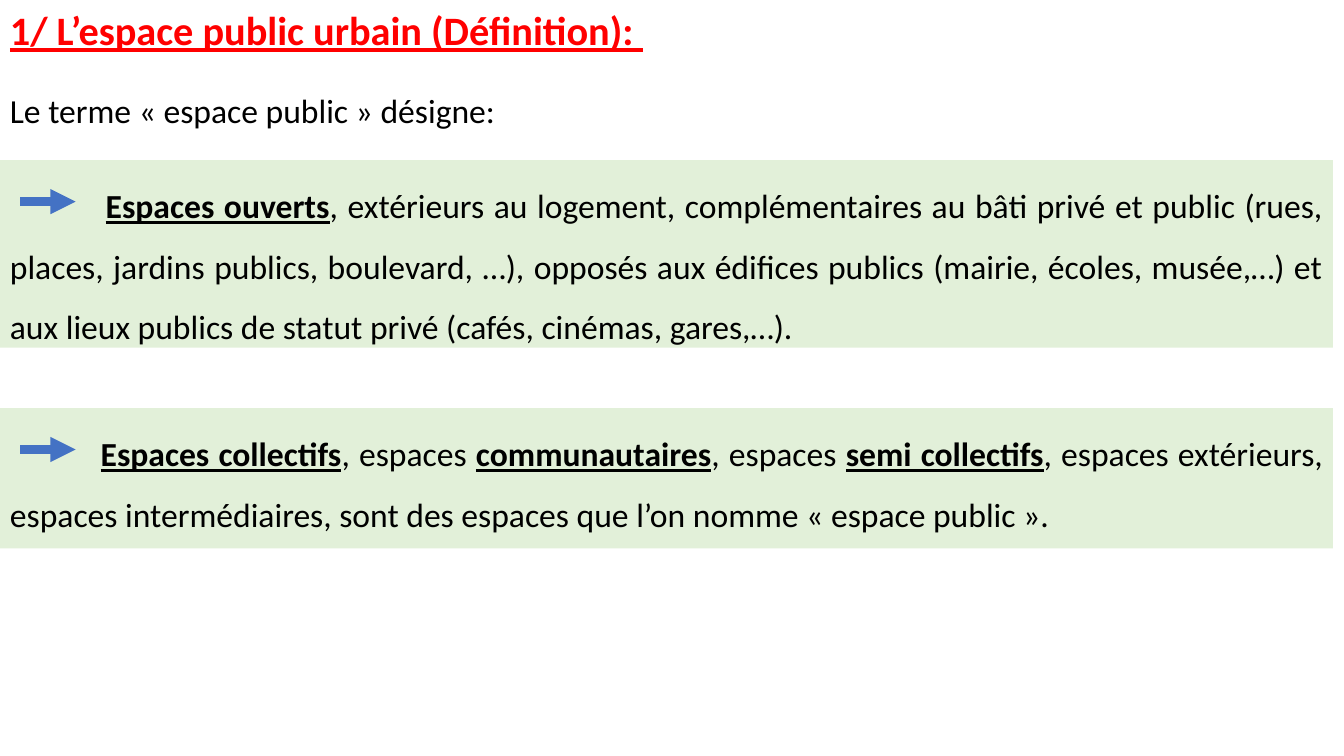
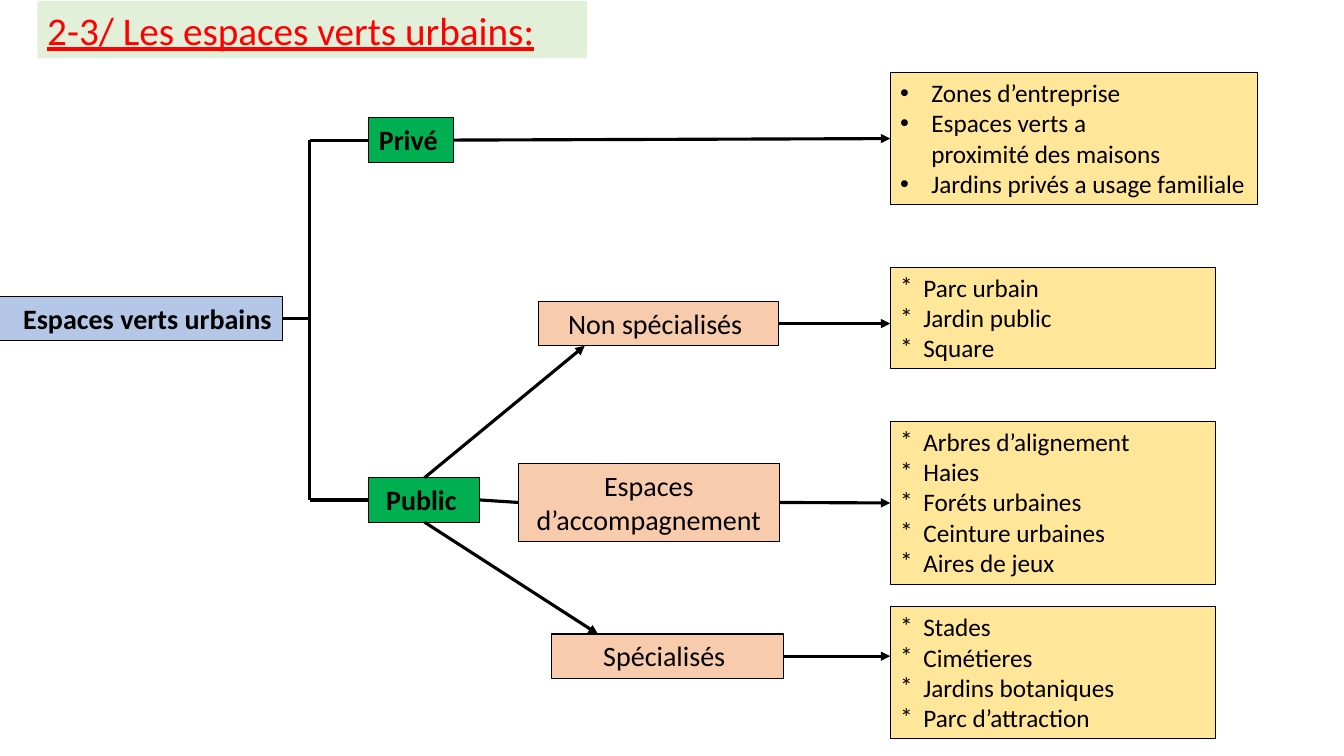
from dataclasses import dataclass

from lxml.etree import SubElement
from pptx import Presentation
from pptx.dml.color import RGBColor
from pptx.enum.shapes import MSO_CONNECTOR as Connector
from pptx.enum.text import MSO_ANCHOR as Anchor, PP_ALIGN as Align
from pptx.oxml.ns import qn
from pptx.util import Pt

PX = 9144  # one px is a hundredth of an inch
TOP, LEFT, BOTTOM, RIGHT = range(4)


@dataclass(frozen=True)
class Theme:
    font: str = "Calibri"
    black: str = "000000"
    title: str = "FF0000"
    band: str = "E2F0D9"
    marker: str = "4472C4"
    root: str = "B4C7E7"
    branch: str = "00B050"
    kind: str = "F8CBAD"
    examples: str = "FFE699"
    title_size: float = 28
    body_size: float = 24
    node_size: float = 20
    list_size: float = 18
    border: float = 0.75
    link: float = 2.25
    marker_line: float = 6


THEME = Theme()

# Content: areas are (left, top, width, height)
DEFINITION_TITLE = "1/ L’espace public urbain (Définition): "
INTRO = "Le terme « espace public » désigne:"
# area, first-line indent, spans (text, emphasised)
DEFINITIONS = [
    ((0, 159, 1322, 186), 95, [
        ("Espaces ouverts", True),
        (", extérieurs au logement, complémentaires au bâti privé et public "
         "(rues, places, jardins publics, boulevard, …), opposés aux édifices "
         "publics (mairie, écoles, musée,…) et aux lieux publics de statut "
         "privé (cafés, cinémas, gares,…).", False)]),
    ((0, 405, 1322, 139), 90, [
        ("Espaces collectifs", True), (", espaces ", False),
        ("communautaires", True), (", espaces ", False),
        ("semi collectifs", True),
        (", espaces extérieurs, espaces intermédiaires, sont des espaces "
         "que l’on nomme « espace public ».", False)]),
]

GREEN_TITLE = "2-3/ Les espaces verts urbains:"
# name: (text, area, fill, left inset)
STEMS = {
    "root": ("Espaces verts urbains", (0, 294, 280, 44), THEME.root, 23),
    "private": ("Privé", (366, 117, 84, 44), THEME.branch, 10),
    "public": ("Public", (366, 474, 110, 44), THEME.branch, 17),
}
KINDS = {
    "general": ("Non spécialisés ", (534, 299, 238, 44)),
    "support": ("Espaces d’accompagnement", (514, 460, 259, 77)),
    "special": ("Spécialisés ", (547, 629, 230, 44)),
}
LIST_LEFT = 883
# name: (top, width, height, bullet, hanging indent, items)
EXAMPLES = {
    "private": (72, 364, 131, "•", 31, [
        "Zones d’entreprise", "Espaces verts a\vproximité des maisons",
        "Jardins privés a usage familiale"]),
    "general": (265, 323, 101, "*", 23, [
        "Parc urbain", "Jardin public", "Square"]),
    "support": (418, 323, 162, "*", 23, [
        "Arbres d’alignement", "Haies", "Foréts urbaines",
        "Ceinture urbaines", "Aires de jeux"]),
    "special": (602, 323, 131, "*", 23, [
        "Stades", "Cimétieres", "Jardins botaniques", "Parc d’attraction"]),
}
TRUNK_X = 307


def rgb(color):
    return RGBColor.from_string(color)


def add_bullet(para, sign, hang):
    props = para._p.get_or_add_pPr()
    props.set("marL", str(hang * PX))
    props.set("indent", str(-hang * PX))
    SubElement(props, qn("a:buFont")).set("typeface", "Arial" if sign == "•" else THEME.font)
    SubElement(props, qn("a:buChar")).set("char", sign)


def add_text(page, area, paras, *, size, color=THEME.black, bold=False,
             underline=False, fill=None, border=False, align=Align.LEFT,
             anchor=Anchor.TOP, spacing=None, indent=0, inset=10, bullet=None):
    """Each paragraph is a string or a list of (text, emphasised) spans."""
    box = page.shapes.add_textbox(*(n * PX for n in area))
    if fill:
        box.fill.solid()
        box.fill.fore_color.rgb = rgb(fill)
    if border:
        box.line.color.rgb = rgb(THEME.black)
        box.line.width = Pt(THEME.border)
    frame = box.text_frame
    frame.word_wrap = True
    frame.vertical_anchor = anchor
    frame.margin_left = inset * PX
    for number, spans in enumerate(paras):
        para = frame.paragraphs[0] if number == 0 else frame.add_paragraph()
        para.alignment = align
        if spacing:
            para.line_spacing = spacing
        if indent:
            para._p.get_or_add_pPr().set("indent", str(indent * PX))
        if bullet:
            add_bullet(para, *bullet)
        if isinstance(spans, str):
            spans = [(spans, False)]
        for text, strong in spans:
            for line_number, line in enumerate(text.split("\v")):
                if line_number:
                    para.add_line_break()
                span = para.add_run()
                span.text = line
                span.font.name = THEME.font
                span.font.size = Pt(size)
                span.font.color.rgb = rgb(color)
                span.font.bold = bold or strong
                span.font.underline = underline or strong
    return box


def add_title(page, area, text, **style):
    style = {"size": THEME.title_size, **style}
    return add_text(page, area, [text], color=THEME.title, underline=True, **style)


def add_line(page, start, end, *, color=THEME.black, width=THEME.link, arrow=False):
    """Each end is a point (x, y) or a joint (box, side)."""
    ends = [(point, None) if isinstance(point[0], int) else ((0, 0), point)
            for point in (start, end)]
    (first, first_joint), (last, last_joint) = ends
    line = page.shapes.add_connector(
        Connector.STRAIGHT, *(n * PX for n in (*first, *last)))
    if first_joint:
        line.begin_connect(*first_joint)
    if last_joint:
        line.end_connect(*last_joint)
    line.line.color.rgb = rgb(color)
    line.line.width = Pt(width)
    props = line.element.spPr
    if arrow:
        SubElement(props.find(qn("a:ln")), qn("a:tailEnd")).set("type", "triangle")
    SubElement(props, qn("a:effectLst"))


def build_definition(page):
    add_title(page, (0, 12, 1000, 47), DEFINITION_TITLE, size=28.8, bold=True,
              anchor=Anchor.BOTTOM, spacing=0.9)
    add_text(page, (0, 84, 534, 50), [INTRO], size=THEME.body_size)
    for area, indent, spans in DEFINITIONS:
        add_text(page, area, [spans], size=THEME.body_size, fill=THEME.band,
                 align=Align.JUSTIFY, spacing=1.5, indent=indent)
        marker_y = area[1] + 41
        add_line(page, (20, marker_y), (75, marker_y), color=THEME.marker,
                 width=THEME.marker_line, arrow=True)


def build_green_spaces(page):
    add_title(page, (37, 1, 545, 57), GREEN_TITLE, fill=THEME.band)

    # Boxes
    stems = {name: add_text(page, area, [text], size=THEME.node_size, bold=True,
                            fill=fill, border=True, inset=inset)
             for name, (text, area, fill, inset) in STEMS.items()}
    kinds = {name: add_text(page, area, [text], size=THEME.node_size,
                            fill=THEME.kind, border=True, align=Align.CENTER)
             for name, (text, area) in KINDS.items()}
    lists = {name: add_text(page, (LIST_LEFT, top, width, height), items,
                            size=THEME.list_size, fill=THEME.examples,
                            border=True, bullet=(sign, hang))
             for name, (top, width, height, sign, hang, items) in EXAMPLES.items()}

    # Trunk from the root to both branches
    middle = {name: area[1] + area[3] // 2 for name, (_, area, _, _) in STEMS.items()}
    fork = (TRUNK_X, middle["root"])
    add_line(page, (stems["root"], RIGHT), fork)
    for name in ("private", "public"):
        corner = (TRUNK_X, middle[name])
        add_line(page, fork, corner)
        add_line(page, corner, (stems[name], LEFT))

    # Public branch to its kinds
    public = stems["public"]
    add_line(page, (public, TOP), (580, 343), arrow=True)
    add_line(page, (public, RIGHT), (kinds["support"], LEFT))
    add_line(page, (public, BOTTOM), (593, 629), arrow=True)

    # Arrows to the examples
    for source, target in (
            (stems["private"], (lists["private"], LEFT)),
            (kinds["general"], (LIST_LEFT, 321)),
            (kinds["support"], (lists["support"], LEFT)),
            (kinds["special"], (LIST_LEFT, 651))):
        add_line(page, (source, RIGHT), target, arrow=True)


def main():
    deck = Presentation()
    deck.slide_width, deck.slide_height = 1333 * PX, 750 * PX
    for build in (build_definition, build_green_spaces):
        build(deck.slides.add_slide(deck.slide_layouts[6]))
    deck.save("out.pptx")


if __name__ == "__main__":
    main()
